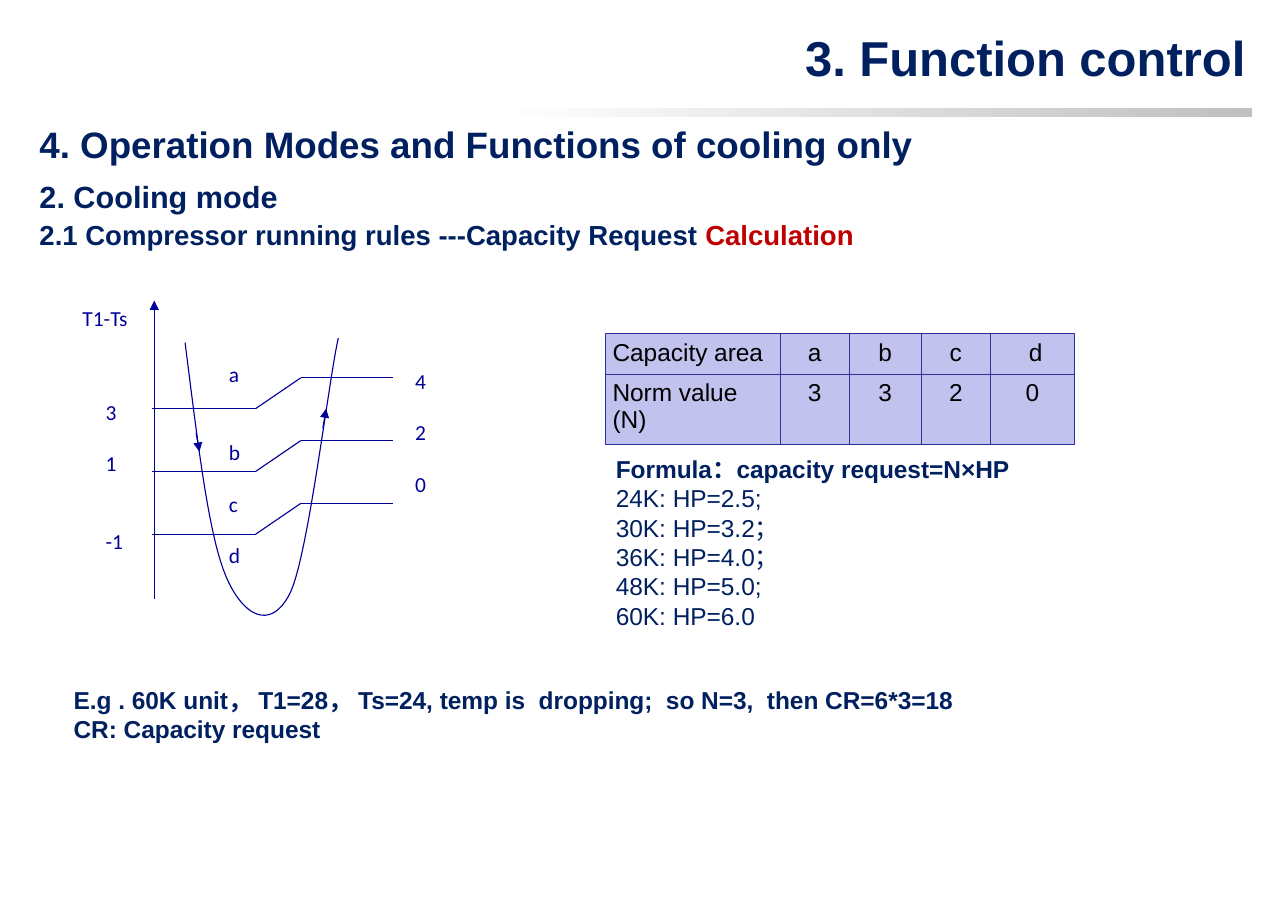
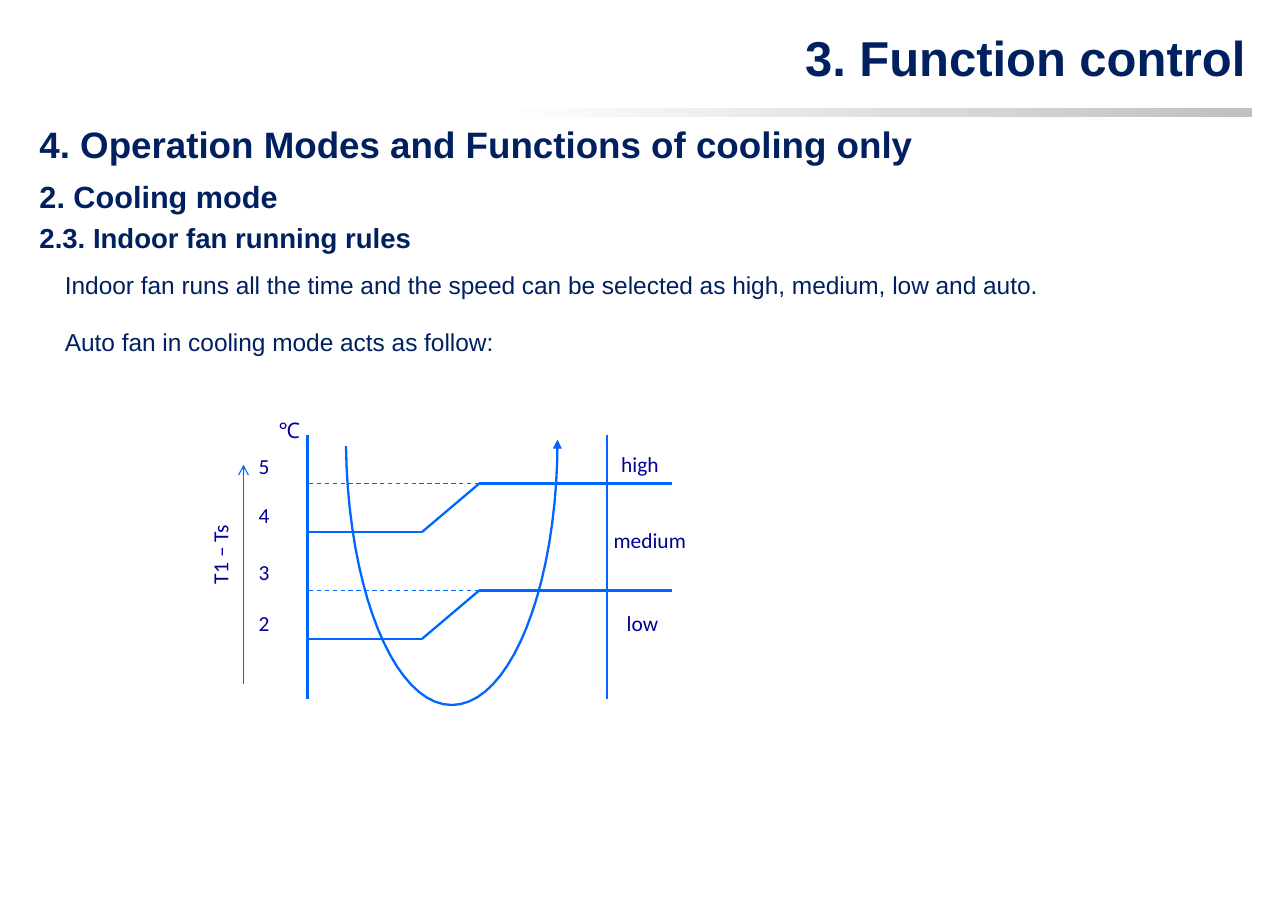
from dataclasses import dataclass, replace
from typing import Optional, Sequence

from lxml import etree
from pptx import Presentation
from pptx.dml.color import RGBColor
from pptx.enum.dml import MSO_LINE_DASH_STYLE as Dash
from pptx.enum.shapes import MSO_CONNECTOR as Connector, MSO_SHAPE as Preset
from pptx.enum.text import MSO_ANCHOR as Anchor, PP_ALIGN as Align
from pptx.oxml.ns import qn
from pptx.util import Inches, Pt

NAVY, RED, INK, BLUE = "002060", "C00000", "000099", "0066FF"
WHITE, SILVER, BLACK = "FFFFFF", "C0C0C0", "000000"
CELL_FILL, CELL_BORDER = "C2C2EE", "2F2F98"

Point = tuple[float, float]


@dataclass(frozen=True)
class TextStyle:
    size: float
    color: str = NAVY
    bold: bool = False
    font: str = "Arial"
    align: Align = Align.LEFT


@dataclass(frozen=True)
class Stroke:
    color: str
    width: float
    dashed: bool = False
    arrow: Optional[str] = None


@dataclass(frozen=True)
class Label:
    """One or more lines; gaps are the points of space before each line."""
    left: float
    top: float
    width: float
    height: float
    lines: Sequence[str]
    gaps: Sequence[float] = ()


TITLE = TextStyle(32, bold=True, align=Align.RIGHT)
CHAPTER = TextStyle(24, bold=True)
SECTION = TextStyle(20, bold=True)
TOPIC = TextStyle(18, bold=True)
BODY = TextStyle(16)
STRONG = replace(BODY, bold=True)
CELL = replace(BODY, color=BLACK)
CHART_LABEL = TextStyle(14, INK, font="Calibri")
THIN = Stroke(INK, 0.75)
THICK = Stroke(BLUE, 1.5)
FINE = Stroke(BLUE, 0.75)


def rgb(value: str) -> RGBColor:
    return RGBColor.from_string(value)


def style_span(span, style: TextStyle) -> None:
    span.font.name = style.font
    span.font.size = Pt(style.size)
    span.font.bold = style.bold
    span.font.color.rgb = rgb(style.color)


def write_para(para, text: str, style: TextStyle) -> None:
    para.text = text
    para.alignment = style.align
    for span in para.runs:
        style_span(span, style)


def set_margins(target) -> None:
    target.margin_left = target.margin_right = Inches(0.06)
    target.margin_top = target.margin_bottom = Inches(0.05)


def add_label(page, label: Label, style: TextStyle):
    box = page.shapes.add_textbox(Inches(label.left), Inches(label.top),
                                  Inches(label.width), Inches(label.height))
    frame = box.text_frame
    frame.word_wrap = True
    frame.text = "\n".join(label.lines)
    for para, text in zip(frame.paragraphs, label.lines):
        write_para(para, text, style)
    for para, gap in zip(frame.paragraphs[1:], label.gaps):
        para.space_before = Pt(gap)
    return box


def apply_stroke(shape, stroke: Stroke) -> None:
    shape.line.color.rgb = rgb(stroke.color)
    shape.line.width = Pt(stroke.width)
    if stroke.dashed:
        shape.line.dash_style = Dash.DASH
    if stroke.arrow:
        line = shape.element.spPr.find(qn("a:ln"))
        etree.SubElement(line, qn("a:tailEnd"), type=stroke.arrow)


def add_line(page, start: Point, end: Point, stroke: Stroke) -> None:
    line = page.shapes.add_connector(Connector.STRAIGHT, *map(Inches, start + end))
    apply_stroke(line, stroke)
    etree.SubElement(line.element.spPr, qn("a:effectLst"))


def add_step(page, xs: Sequence[float], low: float, rise: float, stroke: Stroke) -> None:
    """A low level, a ramp and a high level, joined end to end."""
    points = list(zip(xs, (low, low, low - rise, low - rise)))
    for start, end in zip(points, points[1:]):
        add_line(page, start, end, stroke)


def add_curve(page, points: Sequence[Point], stroke: Stroke, pieces: int = 20) -> None:
    """Bezier segments that share end points: anchor, control, control, anchor..."""
    track = [points[0]]
    for first in range(0, len(points) - 1, 3):
        anchors = points[first:first + 4]
        for number in range(1, pieces + 1):
            t = number / pieces
            weights = ((1 - t) ** 3, 3 * t * (1 - t) ** 2, 3 * t * t * (1 - t), t ** 3)
            track.append(tuple(sum(w * anchor[axis] for w, anchor in zip(weights, anchors))
                               for axis in (0, 1)))
    spots = [(Inches(x), Inches(y)) for x, y in track]
    builder = page.shapes.build_freeform(*spots[0], scale=1.0)
    builder.add_line_segments(spots[1:], close=False)
    curve = builder.convert_to_shape()
    curve.fill.background()
    curve.shadow.inherit = False
    apply_stroke(curve, stroke)


def add_page(deck):
    """Blank page with the shared band, title and headings."""
    page = deck.slides.add_slide(deck.slide_layouts[6])
    band = page.shapes.add_shape(Preset.RECTANGLE, Inches(4.51), Inches(0.98),
                                 Inches(6.85), Inches(0.08))
    band.shadow.inherit = False
    band.line.fill.background()
    band.fill.gradient()
    band.fill.gradient_angle = 0
    for stop, color in zip(band.fill.gradient_stops, (WHITE, SILVER)):
        stop.color.rgb = rgb(color)
    add_label(page, Label(7.18, 0.2, 4.23, 0.64, ["3. Function control"]), TITLE)
    add_label(page, Label(0.26, 1.06, 9.8, 0.5,
                          ["4. Operation Modes and Functions of cooling only"]), CHAPTER)
    add_label(page, Label(0.26, 1.57, 2.48, 0.44, ["2. Cooling mode"]), SECTION)
    return page


def add_border(cell) -> None:
    properties = cell._tc.get_or_add_tcPr()
    for side in ("a:lnL", "a:lnR", "a:lnT", "a:lnB"):
        line = etree.SubElement(properties, qn(side), w=str(Pt(0.75)))
        fill = etree.SubElement(line, qn("a:solidFill"))
        etree.SubElement(fill, qn("a:srgbClr"), val=CELL_BORDER)


def add_capacity_table(page) -> None:
    rows = (("Capacity area", "a", "b", "c", " d"),
            ("Norm value (N)", "3", "3", "2", "0"))
    widths, heights = (1.58, 0.63, 0.65, 0.63, 0.76), (0.36, 0.64)
    table = page.shapes.add_table(len(rows), len(widths), Inches(5.5), Inches(3.03),
                                  Inches(sum(widths)), Inches(sum(heights))).table
    table.first_row = table.horz_banding = False
    for column, width in zip(table.columns, widths):
        column.width = Inches(width)
    for row, height, texts in zip(table.rows, heights, rows):
        row.height = Inches(height)
        for index, (cell, text) in enumerate(zip(row.cells, texts)):
            set_margins(cell)
            add_border(cell)
            cell.fill.solid()
            cell.fill.fore_color.rgb = rgb(CELL_FILL)
            align = Align.CENTER if index else Align.LEFT
            write_para(cell.text_frame.paragraphs[0], text, replace(CELL, align=align))


def build_capacity_page(deck) -> None:
    page = add_page(deck)
    topic = add_label(page, Label(0.26, 1.93, 7.69, 0.4, [
        "2.1 Compressor running rules ---Capacity Request "]), TOPIC)
    span = topic.text_frame.paragraphs[0].add_run()
    span.text = "Calculation"
    style_span(span, replace(TOPIC, color=RED))

    # Temperature diagram
    arrow = replace(THIN, arrow="triangle")
    add_line(page, (1.4, 5.44), (1.4, 2.73), arrow)
    for level in range(3):
        add_step(page, (1.38, 2.32, 2.73, 3.57), 3.71 + 0.57 * level, 0.28, THIN)
    add_curve(page, [(1.68, 3.11), (1.79, 3.98), (1.89, 4.85), (2.05, 5.23),
                     (2.21, 5.61), (2.47, 5.73), (2.64, 5.37),
                     (2.8, 5.01), (2.98, 3.48), (3.07, 3.07)], THIN)
    add_line(page, (1.78, 3.93), (1.81, 4.1), arrow)
    add_line(page, (2.93, 3.89), (2.96, 3.71), arrow)
    line = 17
    for label in (
        Label(0.65, 2.72, 0.83, 0.43, ["T1-Ts"]),
        Label(0.86, 3.57, 0.42, 1.99, ["3", "1", "-1"], [line, 2 * line]),
        Label(3.67, 3.29, 0.42, 1.57, ["4", "2", "0"], [line, line]),
        Label(1.98, 3.23, 0.42, 2.58, ["a", "b", "c", "d"], [2 * line, line, line]),
    ):
        add_label(page, label, CHART_LABEL)

    # Norm values, formula and example
    add_capacity_table(page)
    formula = add_label(page, Label(5.53, 4.06, 4.2, 1.72, [
        "Formula：capacity request=N×HP", "24K: HP=2.5;", "30K: HP=3.2；",
        "36K: HP=4.0；", "48K: HP=5.0;", "60K: HP=6.0"]), BODY).text_frame
    set_margins(formula)
    formula.vertical_anchor = Anchor.MIDDLE
    style_span(formula.paragraphs[0].runs[0], STRONG)
    add_label(page, Label(0.57, 6.17, 10.24, 0.64, [
        "E.g . 60K unit， T1=28， Ts=24, temp is  dropping;  so N=3,  then CR=6*3=18",
        "CR: Capacity request"]), STRONG)


def build_fan_page(deck) -> None:
    page = add_page(deck)
    add_label(page, Label(0.26, 1.96, 3.61, 0.4, ["2.3. Indoor fan running rules"]), TOPIC)
    add_label(page, Label(0.49, 2.4, 10.32, 0.91, [
        "Indoor fan runs all the time and the speed can be selected as high, "
        "medium, low and auto.",
        "Auto fan in cooling mode acts as follow:"], [18.4]), BODY)

    # Axes, switching levels and temperature curve
    add_line(page, (2.21, 6.21), (2.21, 4.22), replace(FINE, arrow="arrow"))
    for x in (2.79, 5.51):
        add_line(page, (x, 3.95), (x, 6.35), THICK)
    rise = 0.44
    for low in (4.83, 5.8):
        add_step(page, (2.78, 3.83, 4.35, 6.1), low, rise, THICK)
        add_line(page, (4.35, low - rise), (2.79, low - rise), replace(FINE, dashed=True))
    add_curve(page, [(3.14, 4.05), (3.16, 5.36), (3.58, 6.4), (4.1, 6.4),
                     (4.63, 6.4), (5.06, 5.33), (5.06, 3.99)],
              replace(THICK, arrow="triangle"))

    # Temperatures and fan speeds
    for text, left, top, width in (
        ("℃", 2.43, 3.74, 0.7), ("5", 2.25, 4.06, 0.53), ("4", 2.25, 4.51, 0.53),
        ("3", 2.25, 5.03, 0.53), ("2", 2.25, 5.49, 0.53), ("high", 5.54, 4.05, 0.7),
        ("medium", 5.47, 4.74, 0.95), ("low", 5.59, 5.49, 0.7),
    ):
        add_label(page, Label(left, top, width, 0.66, [text]), CHART_LABEL)
    axis_name = add_label(page, Label(1.83, 4.09, 0.53, 1.31, ["T1 – Ts"]), CHART_LABEL)
    axis_name.element.txBody.find(qn("a:bodyPr")).set("vert", "vert270")


def main() -> None:
    deck = Presentation()
    deck.slide_width, deck.slide_height = Inches(11.69), Inches(8.27)
    build_capacity_page(deck)
    build_fan_page(deck)
    deck.save("out.pptx")


if __name__ == "__main__":
    main()
